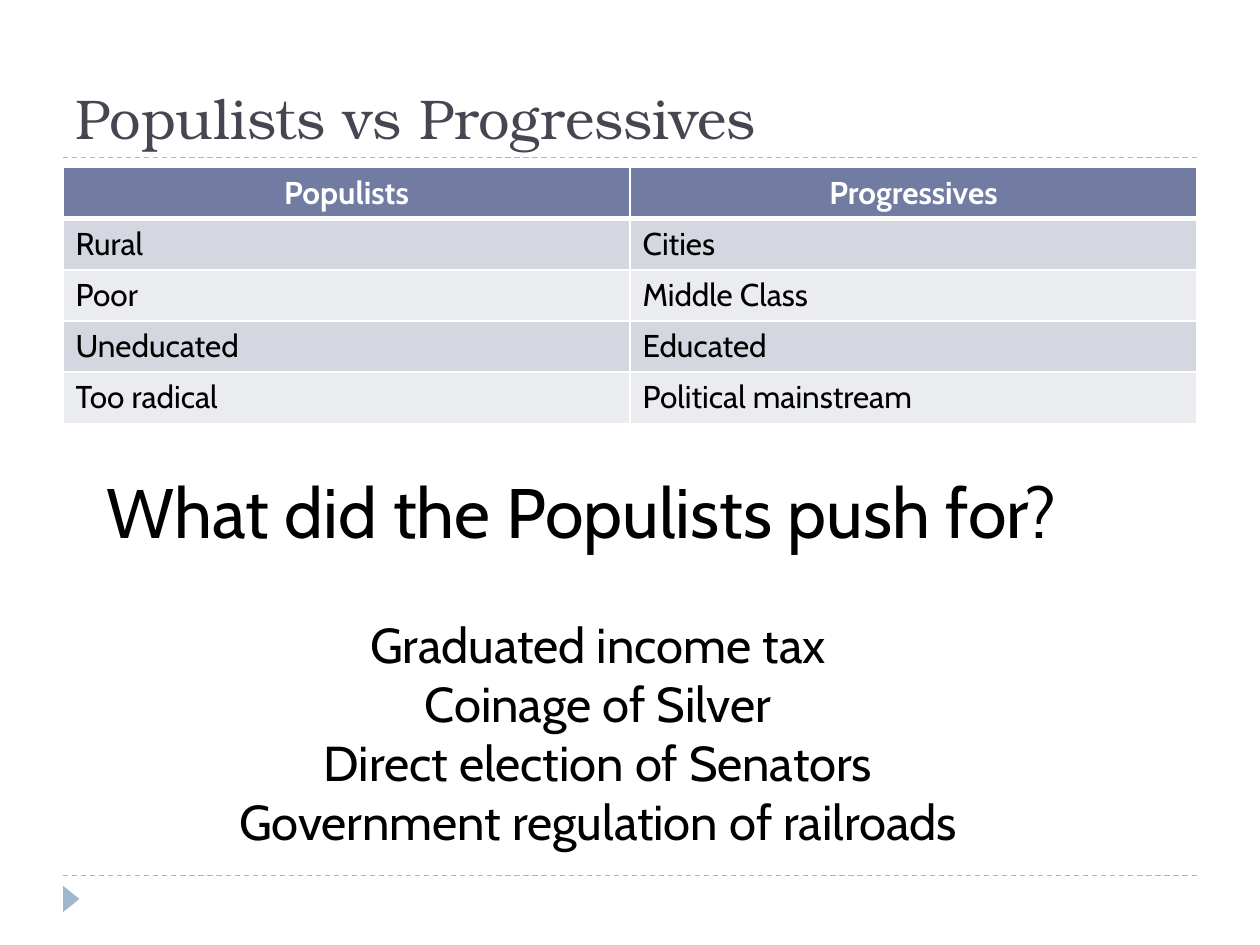
from dataclasses import dataclass

from lxml.etree import SubElement
from pptx import Presentation
from pptx.dml.color import RGBColor
from pptx.enum.dml import MSO_LINE_DASH_STYLE as Dash
from pptx.enum.shapes import MSO_CONNECTOR as Connector, MSO_SHAPE as Shape
from pptx.enum.text import MSO_ANCHOR as Anchor, MSO_AUTO_SIZE as AutoSize, PP_ALIGN as Align
from pptx.oxml.ns import qn
from pptx.util import Inches, Pt

WIDTH, HEIGHT = Inches(10), Inches(7.5)
COLUMN, ROW = WIDTH / 100, HEIGHT / 75

WHITE = RGBColor(0xFF, 0xFF, 0xFF)
BLACK = RGBColor(0x00, 0x00, 0x00)
TITLE_GREY = RGBColor(0x46, 0x46, 0x53)
ACCENT = RGBColor(0x9F, 0xB8, 0xCD)
HEADER_FILL = RGBColor(0x72, 0x7C, 0xA3)
BANDS = (RGBColor(0xD5, 0xD7, 0xE0), RGBColor(0xEB, 0xEC, 0xF0))
BODY_FONT, TITLE_FONT = "Cabin", "TeX Gyre Bonum"

COMPARISON = [
    ("Populists", "Progressives"),
    ("Rural", "Cities"),
    ("Poor", "Middle Class"),
    ("Uneducated", "Educated"),
    ("Too radical", "Political mainstream"),
]
QUESTION = "What did the Populists push for?"
DEMANDS = [
    "Graduated income tax",
    "Coinage of Silver",
    "Direct election of Senators",
    "Government regulation of railroads",
]


@dataclass
class Box:
    left: float
    top: float
    width: float
    height: float

    def frame(self):
        return (round(self.left * COLUMN), round(self.top * ROW),
                round(self.width * COLUMN), round(self.height * ROW))


def place(shape, box):
    shape.left, shape.top, shape.width, shape.height = box.frame()


def write(text_frame, lines, size, font=BODY_FONT, color=BLACK, bold=False,
          align=Align.LEFT, anchor=Anchor.TOP):
    text_frame.word_wrap = True
    text_frame.vertical_anchor = anchor
    for index, line in enumerate(lines):
        para = text_frame.add_paragraph() if index else text_frame.paragraphs[0]
        para.alignment = align
        para.space_before = Pt(0)
        span = para.add_run()
        span.text = line
        span.font.name, span.font.size = font, Pt(size)
        span.font.bold, span.font.color.rgb = bold, color


def add_rule(page, box):
    left, top, width, _ = box.frame()
    rule = page.shapes.add_connector(Connector.STRAIGHT, left, top, left + width, top)
    rule.line.color.rgb = ACCENT
    rule.line.width = Pt(0.75)
    rule.line.dash_style = Dash.DASH
    SubElement(rule._element.spPr, qn("a:effectLst"))


def add_marker(page, box):
    marker = page.shapes.add_shape(Shape.ISOSCELES_TRIANGLE, *box.frame())
    marker.rotation = 90
    marker.shadow.inherit = False
    marker.fill.solid()
    marker.fill.fore_color.rgb = ACCENT
    marker.line.fill.background()


def add_title(page, box):
    title = page.shapes.title
    place(title, box)
    title.text_frame.auto_size = AutoSize.NONE
    write(title.text_frame, ["Populists vs Progressives"], 32, font=TITLE_FONT,
          color=TITLE_GREY, anchor=Anchor.BOTTOM)


def add_border(cell, side, points):
    border = SubElement(cell._tc.get_or_add_tcPr(), qn(f"a:ln{side}"), w=str(Pt(points)))
    fill = SubElement(border, qn("a:solidFill"))
    SubElement(fill, qn("a:srgbClr"), val=str(WHITE))


def add_comparison(page, box):
    rows, columns = len(COMPARISON), len(COMPARISON[0])
    table = page.shapes.add_table(rows, columns, *box.frame()).table
    for row, entries in enumerate(COMPARISON):
        header = row == 0
        for column, entry in enumerate(entries):
            cell = table.cell(row, column)
            for side in "LRTB":
                thick = (header and side == "B") or (row == 1 and side == "T")
                add_border(cell, side, 3 if thick else 1)
            cell.fill.solid()
            cell.fill.fore_color.rgb = HEADER_FILL if header else BANDS[(row - 1) % 2]
            write(cell.text_frame, [entry], 18, bold=header,
                  color=WHITE if header else BLACK,
                  align=Align.CENTER if header else Align.LEFT)


def add_question(page, box):
    question = page.shapes.add_textbox(*box.frame())
    write(question.text_frame, [QUESTION], 40)


def add_demands(page, box):
    demands = page.placeholders[1]
    place(demands, box)
    demands.text_frame.auto_size = AutoSize.NONE
    write(demands.text_frame, DEMANDS, 28, align=Align.CENTER)
    for para in demands.text_frame.paragraphs:
        properties = para._p.get_or_add_pPr()
        properties.set("marL", "0")
        properties.set("indent", "0")
        SubElement(properties, qn("a:buNone"))


def main():
    deck = Presentation()
    deck.slide_width, deck.slide_height = WIDTH, HEIGHT
    page = deck.slides.add_slide(deck.slide_layouts[1])
    for top in (69.5, 12.5):
        add_rule(page, Box(5, top, 90, 0))
    add_marker(page, Box(4.6, 70.7, 2.1, 1.3))
    add_title(page, Box(5, 1.7, 90, 10.8))
    add_comparison(page, Box(5, 13.3, 90, 20.3))
    add_question(page, Box(7.5, 36.7, 82.5, 7.7))
    add_demands(page, Box(5.8, 48.3, 83.3, 19.9))
    deck.save("out.pptx")


if __name__ == "__main__":
    main()
